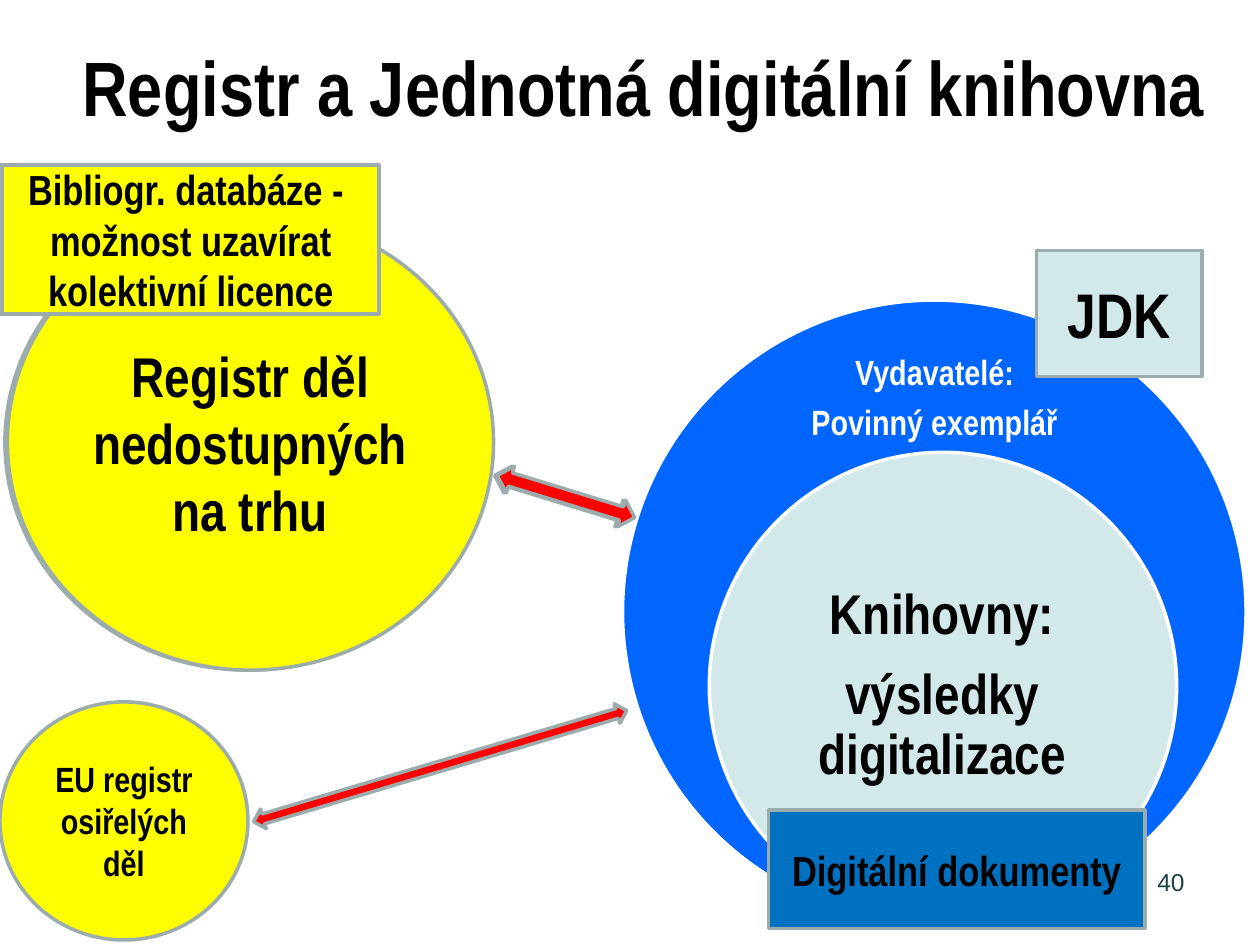
from pptx import Presentation
from pptx.dml.color import RGBColor
from pptx.enum import shapes, text
from pptx.util import Cm, Pt

BLACK = RGBColor(0, 0, 0)
WHITE = RGBColor(0xFF, 0xFF, 0xFF)
YELLOW = RGBColor(0xFF, 0xFF, 0)
RED = RGBColor(0xFF, 0, 0)
BLUE = RGBColor(0, 0x66, 0xFF)
NAVY = RGBColor(0, 0x70, 0xC0)
PALE = RGBColor(0xD3, 0xE8, 0xE9)
GREY = RGBColor(0x9C, 0xAC, 0xAC)
TEAL = RGBColor(0x1B, 0x44, 0x45)

KIND = shapes.MSO_SHAPE
ALIGN = text.PP_ALIGN

deck = Presentation()
deck.slide_width, deck.slide_height = Cm(25.4), Cm(19.05)
slide = deck.slides.add_slide(deck.slide_layouts[6])


def write(item, words, size, color=BLACK, inset=None, ring=False):
    """Put centred bold text into item; ring sets the looser spacing of the circle labels."""
    frame = item.text_frame
    frame.word_wrap = True
    frame.vertical_anchor = text.MSO_ANCHOR.MIDDLE
    if inset:
        frame.margin_left = frame.margin_right = Cm(inset)
        frame.margin_top = frame.margin_bottom = Cm(inset)
    frame.text = words
    for para in frame.paragraphs:
        para.alignment = ALIGN.CENTER
        if ring:
            para.line_spacing = 0.9
            para.space_after = Pt(round(size * 0.35))
        font = para.runs[0].font
        font.name, font.size, font.bold = "Arial Narrow", Pt(size), True
        font.color.rgb = color


def draw(kind, box, fill, line=GREY, turn=0):
    item = slide.shapes.add_shape(kind, *map(Cm, box))
    item.shadow.inherit = False
    item.fill.solid()
    item.fill.fore_color.rgb = fill
    item.line.color.rgb = line
    item.line.width = Pt(2)
    item.rotation = turn
    return item


title = slide.shapes.add_textbox(Cm(1.27), Cm(0.53), Cm(23.44), Cm(2.39))
write(title, "Registr a Jednotná digitální knihovna", 44)

# Nested circles of the digital library, each with its label
rings = [
    ((12.55, 6.05, 12.57, 12.57), BLUE, (15.54, 6.99, 6.6, 2.13),
     "Vydavatelé:\nPovinný exemplář", 20, WHITE, 0.41),
    ((14.3, 9.12, 9.42, 9.42), PALE, (15.67, 11.48, 6.65, 4.72),
     "Knihovny:\nvýsledky digitalizace", 32, BLACK, 0.64),
]
for box, fill, area, words, size, color, inset in rings:
    draw(KIND.OVAL, box, fill, WHITE)
    label = slide.shapes.add_textbox(*map(Cm, area))
    write(label, words, size, color, inset, ring=True)

number = slide.shapes.add_textbox(Cm(18.21), Cm(17.35), Cm(5.92), Cm(1.32))
number.text_frame.word_wrap = True
number.text_frame.text = "40"
para = number.text_frame.paragraphs[0]
para.alignment = ALIGN.RIGHT
font = para.runs[0].font
font.name, font.size = "Arial", Pt(14)
font.color.rgb = TEAL

# Boxes and the register of orphan works
notes = [
    (KIND.RECTANGLE, (15.49, 16.33, 7.59, 2.39), NAVY, "Digitální dokumenty", 24),
    (KIND.RECTANGLE, (20.9, 5.05, 3.33, 2.54), PALE, "JDK", 36),
    (KIND.OVAL, (0, 14.15, 5, 4.8), YELLOW, "EU registr osiřelých děl", 20),
]
for kind, box, fill, words, size in notes:
    write(draw(kind, box, fill), words, size)
draw(KIND.LEFT_RIGHT_ARROW, (4.95, 15.24, 7.85, 0.41), RED, turn=343.4)

# The main register, its heading and arrow lie in two slightly shifted layers
for shift in (0, 0.05):
    disc = draw(KIND.OVAL, (0.1 + shift, 4.32, 9.8, 9.19), YELLOW)
    write(disc, "Registr děl nedostupných na trhu", 32)
    head = draw(KIND.RECTANGLE, (shift, 3.33, 7.59, 3), YELLOW)
    write(head, "Bibliogr. databáze - \nmožnost uzavírat kolektivní licence", 24)
    draw(KIND.LEFT_RIGHT_ARROW, (9.91 + shift, 9.73, 2.9, 0.56), RED, turn=17)

deck.save("out.pptx")
